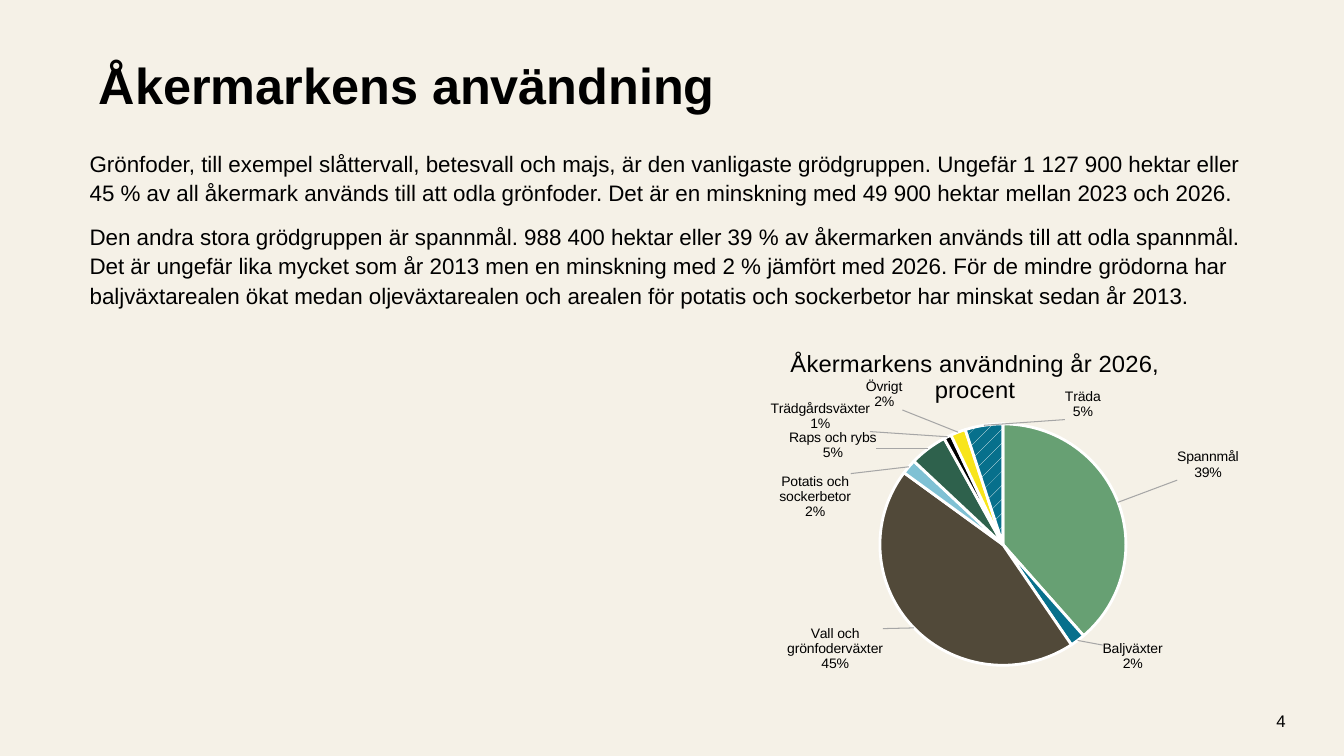
from dataclasses import dataclass

from lxml import etree
from pptx import Presentation
from pptx.chart.data import CategoryChartData
from pptx.dml.color import RGBColor
from pptx.enum.chart import XL_CHART_TYPE as ChartType, XL_LABEL_POSITION as LabelPosition
from pptx.enum.dml import MSO_PATTERN as Pattern
from pptx.enum.text import MSO_ANCHOR as Anchor, PP_ALIGN as Align
from pptx.oxml import parse_xml
from pptx.oxml.ns import nsdecls, qn
from pptx.util import Inches, Pt

TITLE = "Åkermarkens användning"
BODY = [
    "Grönfoder, till exempel slåttervall, betesvall och majs, är den vanligaste grödgruppen. "
    "Ungefär 1 127 900 hektar eller 45 % av all åkermark används till att odla grönfoder. "
    "Det är en minskning med 49 900 hektar mellan 2023 och 2026.",
    "Den andra stora grödgruppen är spannmål. 988 400 hektar eller 39 % av åkermarken används "
    "till att odla spannmål. Det är ungefär lika mycket som år 2013 men en minskning med 2 % "
    "jämfört med 2026. För de mindre grödorna har baljväxtarealen ökat medan oljeväxtarealen "
    "och arealen för potatis och sockerbetor har minskat sedan år 2013.",
]
PAGE_NUMBER = "4"
CHART_TITLE = "Åkermarkens användning år 2026, procent"
CROPS = [
    ("Spannmål", 39, "67A073", (0.10, -0.06)),
    ("Baljväxter", 2, "07708C", (0.04, 0)),
    ("Vall och grönfoderväxter", 45, "514939", (-0.05, -0.01)),
    ("Potatis och sockerbetor", 2, "7FC1D4", (-0.10, 0.17)),
    ("Raps och rybs", 5, "2E614C", (-0.09, 0.05)),
    ("Trädgårdsväxter", 1, "000000", (-0.14, 0)),
    ("Övrigt", 2, "F8E51B", (-0.10, -0.05)),
    ("Träda", 5, "07708C", (0.22, 0)),
]
HATCHED = "Träda"


@dataclass(frozen=True)
class Theme:
    font: str = "Arial"
    background: str = "F5F1E7"
    ink: str = "000000"
    edge: str = "FFFFFF"
    leader: str = "A6A6A6"
    title: int = 36
    body: int = 16
    chart_title: int = 17
    label: int = 10
    page: int = 12


THEME = Theme()
WIDTH, HEIGHT = 13.33, 7.5
BOXES = {
    "title": (0.066, 0.069, 0.764, 0.091),
    "body": (0.0593, 0.188, 0.884, 0.257),
    "chart": (0.537, 0.445, 0.398, 0.452),
    "page": (0.877, 0.927, 0.087, 0.053),
}


def place(name):
    left, top, width, height = BOXES[name]
    return [Inches(round(share * side, 2)) for share, side in
            ((left, WIDTH), (top, HEIGHT), (width, WIDTH), (height, HEIGHT))]


def style_font(font, size, bold=False):
    font.name, font.size, font.bold = THEME.font, Pt(size), bold
    font.color.rgb = RGBColor.from_string(THEME.ink)


def write(frame, texts, size, bold=False, align=Align.LEFT, anchor=Anchor.TOP, spacing=1.0, gap=0):
    frame.word_wrap = True
    frame.vertical_anchor = anchor
    for index, text in enumerate(texts):
        paragraph = frame.add_paragraph() if index else frame.paragraphs[0]
        paragraph.alignment, paragraph.line_spacing = align, spacing
        paragraph.space_before = Pt(gap if index else 0)
        run = paragraph.add_run()
        run.text = text
        style_font(run.font, size, bold)


def set_layout(parent, index, **values):
    for old in parent.findall(qn("c:layout")):
        parent.remove(old)
    layout = etree.Element(qn("c:layout"))
    manual = etree.SubElement(layout, qn("c:manualLayout"))
    for tag, value in values.items():
        etree.SubElement(manual, qn(f"c:{tag}")).set("val", str(value))
    parent.insert(index, layout)


def set_flags(element, **flags):
    for tag, value in flags.items():
        element.find(qn(f"c:{tag}")).set("val", value)


def style_slices(series):
    for point_index, (name, _, color, _) in enumerate(CROPS):
        point = series.points[point_index]
        fill = point.format.fill
        if name == HATCHED:
            fill.patterned()
            fill.pattern = Pattern.PERCENT_5
            fill.fore_color.rgb = RGBColor.from_string(THEME.edge)
            fill.back_color.rgb = RGBColor.from_string(color)
        else:
            fill.solid()
            fill.fore_color.rgb = RGBColor.from_string(color)
        point.format.line.color.rgb = RGBColor.from_string(THEME.edge)
        point.format.line.width = Pt(2)


def style_labels(series):
    labels = series.data_labels
    labels.show_percentage = labels.show_category_name = True
    labels.show_value = False
    style_font(labels.font, THEME.label)
    for index in range(len(CROPS)):
        label = series.points[index].data_label
        style_font(label.font, THEME.label)
        label.position = LabelPosition.OUTSIDE_END
    group = series._element.find(qn("c:dLbls"))
    for element, (_, _, _, (x, y)) in zip(group.findall(qn("c:dLbl")), CROPS):
        set_flags(element, showVal="0", showCatName="1", showPercent="1")
        set_layout(element, 1, x=x, y=y)
        etree.SubElement(element, qn("c:separator")).text = "\n"
    for old in group.findall(qn("c:showLeaderLines")):
        group.remove(old)
    etree.SubElement(group, qn("c:separator")).text = "\n"
    etree.SubElement(group, qn("c:showLeaderLines")).set("val", "1")
    group.append(parse_xml(
        f'<c:leaderLines {nsdecls("c", "a")}><c:spPr><a:ln w="9525"><a:solidFill>'
        f'<a:srgbClr val="{THEME.leader}"/></a:solidFill></a:ln></c:spPr></c:leaderLines>'))


def add_pie(slide):
    data = CategoryChartData()
    data.categories = [crop[0] for crop in CROPS]
    data.add_series("Series 1", [crop[1] for crop in CROPS])
    chart = slide.shapes.add_chart(ChartType.PIE, *place("chart"), data).chart
    chart.has_legend = False
    style_font(chart.font, THEME.label)
    chart.has_title = True
    write(chart.chart_title.text_frame, [CHART_TITLE], THEME.chart_title, align=Align.CENTER)
    set_layout(chart.chart_title._element, 1, xMode="edge", yMode="edge", x=0.12, y=0.02)
    plot = chart.plots[0]
    plot.vary_by_categories = True
    style_slices(plot.series[0])
    style_labels(plot.series[0])
    body = chart._chartSpace.find(qn("c:chart"))
    set_layout(body.find(qn("c:plotArea")), 0, layoutTarget="inner", xMode="edge", yMode="edge",
               x=0.28, y=0.26, w=0.49, h=0.72)
    body.addnext(parse_xml(
        f'<c:spPr {nsdecls("c", "a")}><a:solidFill><a:srgbClr val="{THEME.background}"/>'
        '</a:solidFill><a:ln><a:noFill/></a:ln></c:spPr>'))


def main():
    presentation = Presentation()
    presentation.slide_width, presentation.slide_height = Inches(WIDTH), Inches(HEIGHT)
    slide = presentation.slides.add_slide(presentation.slide_layouts[5])
    slide.background.fill.solid()
    slide.background.fill.fore_color.rgb = RGBColor.from_string(THEME.background)
    title = slide.shapes.title
    title.left, title.top, title.width, title.height = place("title")
    write(title.text_frame, [TITLE], THEME.title, bold=True, anchor=Anchor.BOTTOM, spacing=0.9)
    page = slide.shapes.add_textbox(*place("page"))
    write(page.text_frame, [PAGE_NUMBER], THEME.page, align=Align.RIGHT, anchor=Anchor.MIDDLE)
    body = slide.shapes.add_textbox(*place("body"))
    write(body.text_frame, BODY, THEME.body, spacing=1.1, gap=10)
    add_pie(slide)
    presentation.save("out.pptx")


if __name__ == "__main__":
    main()
